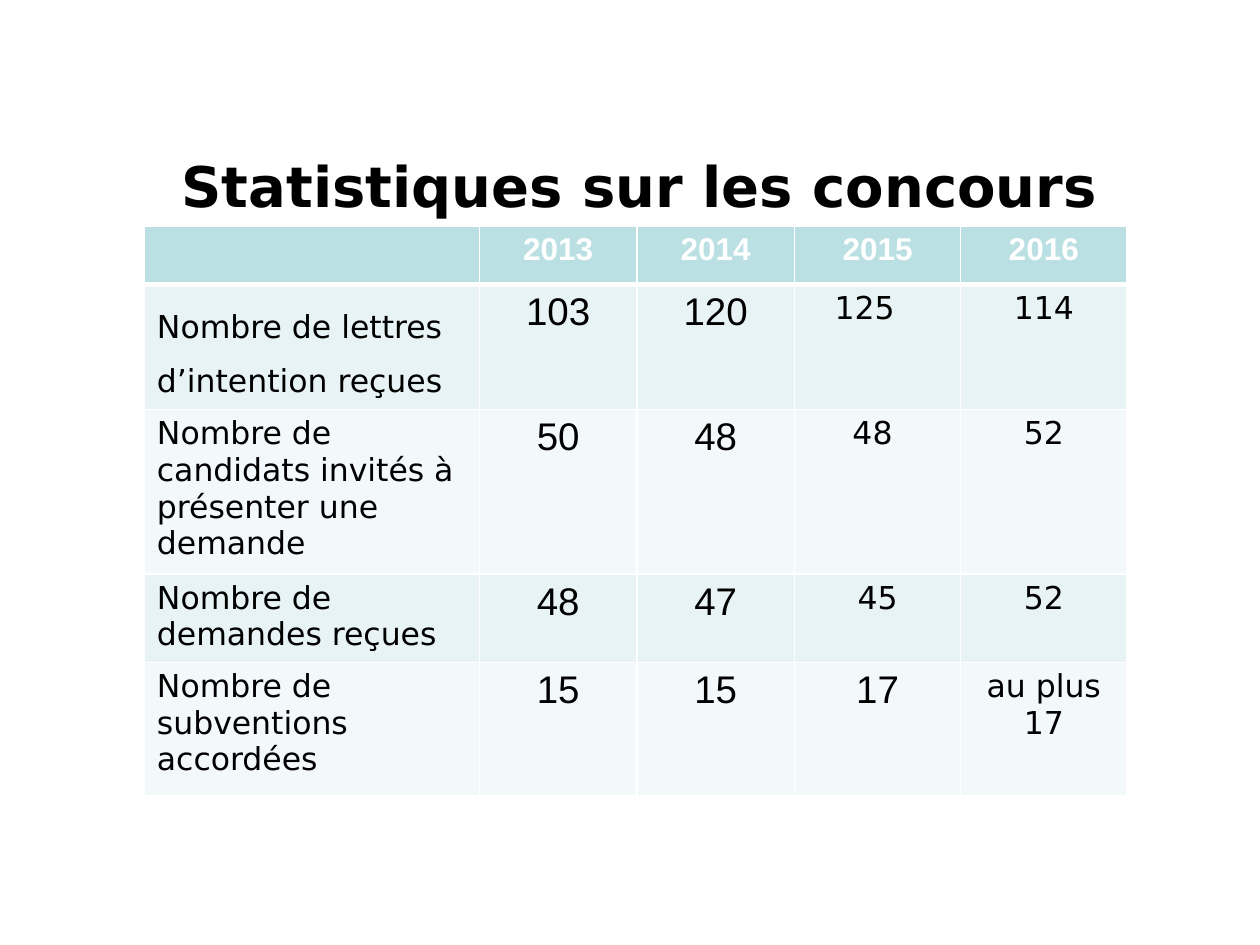
from lxml import etree
from pptx import Presentation
from pptx.dml.color import RGBColor
from pptx.enum.text import MSO_ANCHOR, PP_ALIGN
from pptx.oxml.ns import qn
from pptx.util import Pt

CENTER, LEFT = PP_ALIGN.CENTER, PP_ALIGN.LEFT
TOP = MSO_ANCHOR.TOP
TITLE_ONLY = 5
COLORS = {
    "text": "000000",
    "white": "FFFFFF",
    "header": "BBE0E3",
    "odd": "E7F3F4",
    "even": "F3F9FA",
}
SANS, ARIAL = "DejaVu Sans", "Arial"

YEARS = ["2013", "2014", "2015", "2016"]
STATISTICS = [
    ("Nombre de lettres d’intention reçues", ["103", "120", "125", "114"]),
    ("Nombre de candidats invités à présenter une demande",
     ["50", "48", "48", "52"]),
    ("Nombre de demandes reçues", ["48", "47", "45", "52"]),
    ("Nombre de subventions accordées", ["15", "15", "17", "au plus 17"]),
]
COLUMN_WIDTHS = [191.5, 90, 90, 95, 95]
ROW_HEIGHTS = [33.5, 71.5, 94, 50.5, 76.5]
LARGE_FIGURES = {(row, col) for row in range(1, 5) for col in (1, 2)} | {(4, 3)}
# Extra right inset that moves a centred figure to the left
RIGHT_INSETS = {(1, 3): 22, (2, 3): 13}


class SlideBuilder:
    def __init__(self, slide):
        self.slide = slide

    def add_text(self, paragraph, text, size=18, font=SANS, bold=False,
                 color="text", align=LEFT):
        paragraph.alignment = align
        run = paragraph.add_run()
        run.text = text
        run.font.name = font
        run.font.size = Pt(size)
        run.font.bold = bold
        run.font.color.rgb = RGBColor.from_string(COLORS[color])

    def title(self, text, left, top, width, height):
        title = self.slide.shapes.title
        title.left, title.top = Pt(left), Pt(top)
        title.width, title.height = Pt(width), Pt(height)
        frame = title.text_frame
        frame.vertical_anchor = TOP
        frame.word_wrap = True
        self.add_text(frame.paragraphs[0], text, size=32, bold=True)

    def table(self, left, top, widths, heights):
        table = self.slide.shapes.add_table(
            len(heights), len(widths), Pt(left), Pt(top),
            Pt(sum(widths)), Pt(sum(heights))).table
        for column, width in zip(table.columns, widths):
            column.width = Pt(width)
        for row, height in zip(table.rows, heights):
            row.height = Pt(height)
        return table

    def cell(self, cell, fill, top_border=1, bottom_border=1):
        """Border and fill a cell, and return its first paragraph."""
        properties = cell._tc.get_or_add_tcPr()
        borders = {"lnL": 1, "lnR": 1, "lnT": top_border, "lnB": bottom_border}
        for side, weight in borders.items():
            line = etree.SubElement(properties, qn(f"a:{side}"), w=str(Pt(weight)))
            solid = etree.SubElement(line, qn("a:solidFill"))
            etree.SubElement(solid, qn("a:srgbClr"), val=COLORS["white"])
        cell.fill.solid()
        cell.fill.fore_color.rgb = RGBColor.from_string(COLORS[fill])
        return cell.text_frame.paragraphs[0]


def add_statistics(builder):
    table = builder.table(82.5, 129, COLUMN_WIDTHS, ROW_HEIGHTS)
    for col, year in enumerate(["", *YEARS]):
        paragraph = builder.cell(table.cell(0, col), "header", bottom_border=3)
        if year:
            builder.add_text(paragraph, year, font=ARIAL, bold=True,
                             color="white", align=CENTER)

    for row, (label, figures) in enumerate(STATISTICS, start=1):
        fill = "odd" if row % 2 else "even"
        for col, text in enumerate([label, *figures]):
            cell = table.cell(row, col)
            paragraph = builder.cell(cell, fill, top_border=3 if row == 1 else 1)
            if (row, col) in RIGHT_INSETS:
                cell.margin_right = Pt(RIGHT_INSETS[row, col])
            large = (row, col) in LARGE_FIGURES
            builder.add_text(paragraph, text, size=22 if large else 18,
                             font=ARIAL if large else SANS,
                             align=CENTER if col else LEFT)
    table.cell(1, 0).text_frame.paragraphs[0].line_spacing = 1.5


def main():
    presentation = Presentation()
    presentation.slide_width, presentation.slide_height = Pt(720), Pt(540)
    layout = presentation.slide_layouts[TITLE_ONLY]
    builder = SlideBuilder(presentation.slides.add_slide(layout))
    builder.title("Statistiques sur les concours", 96.5, 83, 564.5, 46)
    add_statistics(builder)
    presentation.save("out.pptx")


if __name__ == "__main__":
    main()
